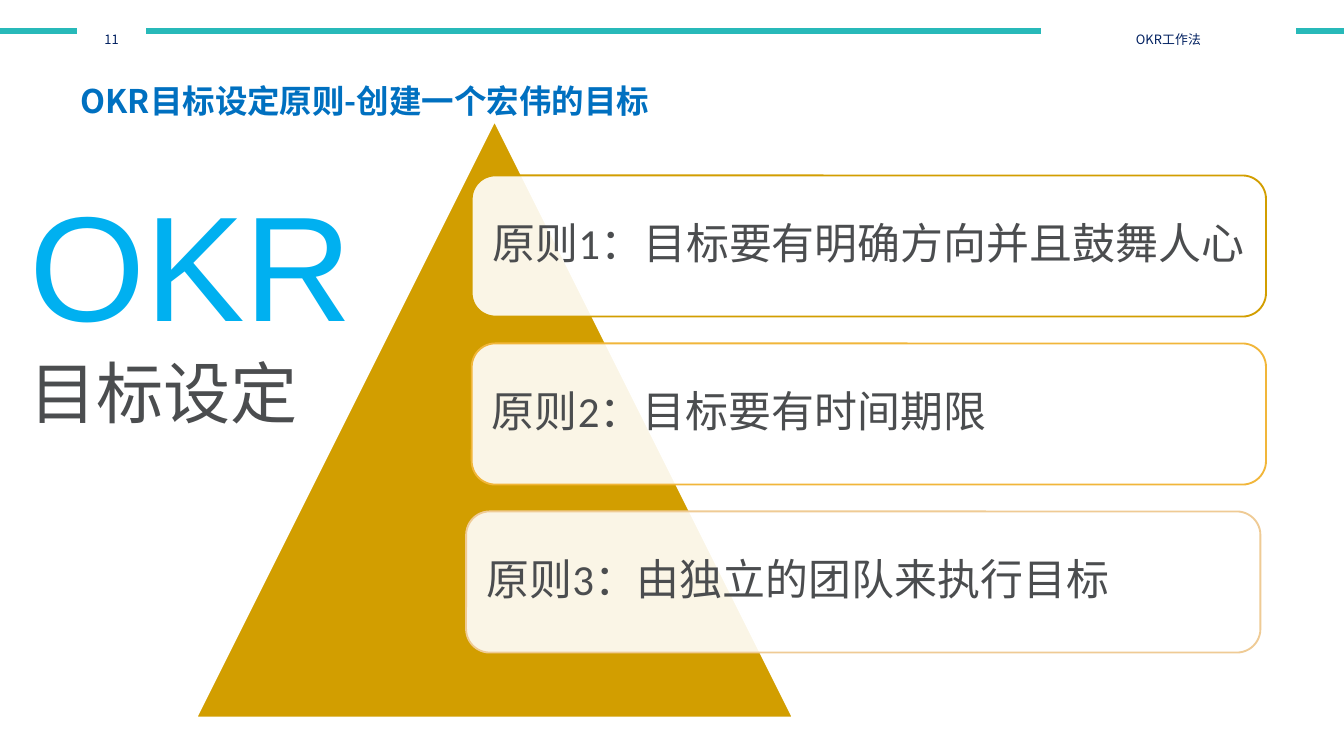
import pptx
import pptx.dml.color
import pptx.enum.shapes
import pptx.enum.text
import pptx.oxml
import pptx.oxml.ns
import pptx.util

Pt = pptx.util.Pt
SHAPE = pptx.enum.shapes.MSO_SHAPE
ALIGN = pptx.enum.text.PP_ALIGN
ANCHOR = pptx.enum.text.MSO_ANCHOR
qn = pptx.oxml.ns.qn
CJK = "Noto Sans CJK SC"
NAVY, GRAY, WHITE, GOLD = "002060", "4B4D4F", "FFFFFF", "D29E00"


def rgb(value):
    return pptx.dml.color.RGBColor.from_string(value)


def add_child(parent, tag, **attrs):
    child = parent.makeelement(qn(tag), attrs)
    parent.append(child)
    return child


def write(p, text, size, color, font=CJK, bold=False, baseline=None):
    r = p.add_run()
    r.text = text
    for name, value in {"size": Pt(size), "name": font, "bold": bold}.items():
        setattr(r.font, name, value)
    r.font.color.rgb = rgb(color)
    rPr = r.font._element if hasattr(r.font, "_element") else r._r.get_or_add_rPr()
    add_child(rPr, "a:ea", typeface=CJK)
    if baseline:
        rPr.set("baseline", str(baseline * 1000))


def add_box(s, kind, box, fill, line, width, alpha=None):
    sp = s.shapes.add_shape(kind, *map(Pt, box))
    sp.shadow.inherit = False
    sp.fill.solid()
    sp.fill.fore_color.rgb = rgb(fill)
    sp.line.color.rgb = rgb(line)
    sp.line.width = Pt(width)
    if alpha:
        color = sp.fill._xPr.find(qn("a:solidFill"))[0]
        add_child(color, "a:alpha", val=str(alpha * 1000))
    return sp


def set_frame(tf, anchor, inset=None):
    tf.word_wrap = True
    tf.vertical_anchor = anchor
    if inset is not None:
        for side in ("left", "right", "top", "bottom"):
            setattr(tf, "margin_" + side, Pt(inset))


def header(s, left, top, width, height):
    # Rule across the slide
    y = top + 10
    rule = s.shapes.add_connector(
        pptx.enum.shapes.MSO_CONNECTOR.STRAIGHT, Pt(left), Pt(y), Pt(left + width), Pt(y))
    rule.line.color.rgb = rgb("28B9B9")
    rule.line.width = Pt(3)
    add_child(rule._element.spPr, "a:effectLst")

    # Page number and running title, breaking the rule
    for x, w, text in ((41.8, 36, "11"), (558, 136, "OKR工作法")):
        sp = add_box(s, SHAPE.RECTANGLE, (left + x, top, w, height), WHITE, WHITE, 0.75)
        set_frame(sp.text_frame, ANCHOR.MIDDLE)
        p = sp.text_frame.paragraphs[0]
        p.alignment = ALIGN.CENTER
        write(p, text, 12, NAVY, baseline=-25)


def title(s, left, top, width, height):
    sp = s.shapes.title
    for name, value in zip(("left", "top", "width", "height"), (left, top, width, height)):
        setattr(sp, name, Pt(value))
    tf = sp.text_frame
    set_frame(tf, ANCHOR.MIDDLE)
    tf.auto_size = pptx.enum.text.MSO_AUTO_SIZE.NONE
    p = tf.paragraphs[0]
    p.alignment = ALIGN.LEFT
    p.line_spacing = 0.9
    write(p, "OKR目标设定原则-创建一个宏伟的目标", 30, "0070C0", bold=True, baseline=-25)


def pyramid(s, left, top, size):
    add_box(s, SHAPE.ISOSCELES_TRIANGLE, (left, top, size, size), GOLD, WHITE, 1)

    # Principle cards: (offset from the pyramid, outline, alignment, text)
    cards = (
        (147.6, GOLD, ALIGN.CENTER, "原则1：目标要有明确方向并且鼓舞人心"),
        (147.6, "F1B63A", ALIGN.LEFT, "原则2：目标要有时间期限"),
        (144.6, "EFCB95", ALIGN.LEFT, "原则3：由独立的团队来执行目标"),
    )
    for i, (x, line, align, text) in enumerate(cards):
        box = (left + x, top + 29.2 + i * 90, 425.5, 75.6)
        sp = add_box(s, SHAPE.ROUNDED_RECTANGLE, box, WHITE, line, 1, alpha=90)
        set_frame(sp.text_frame, ANCHOR.MIDDLE, 7.2)
        p = sp.text_frame.paragraphs[0]
        p.alignment = align
        p.line_spacing = 0.9
        write(p, text, 23, GRAY, "Calibri")


def topic(s, left, top, width, height):
    sp = s.shapes.add_textbox(*map(Pt, (left, top, width, height)))
    tf = sp.text_frame
    set_frame(tf, ANCHOR.TOP)
    write(tf.paragraphs[0], "OKR", 80, "00B0F0", "Arial")
    write(tf.add_paragraph(), "目标设定", 36, GRAY)


def main():
    prs = pptx.Presentation()
    prs.slide_width, prs.slide_height = Pt(720), Pt(405)
    s = prs.slides.add_slide(prs.slide_layouts[5])
    header(s, 0, 6.5, 720, 21.6)
    title(s, 36, 20.2, 424.8, 43.9)
    pyramid(s, 105.1, 64.8, 319.7)
    topic(s, 8.6, 88.6, 213.1, 147.6)
    prs.save("out.pptx")


if __name__ == "__main__":
    main()
